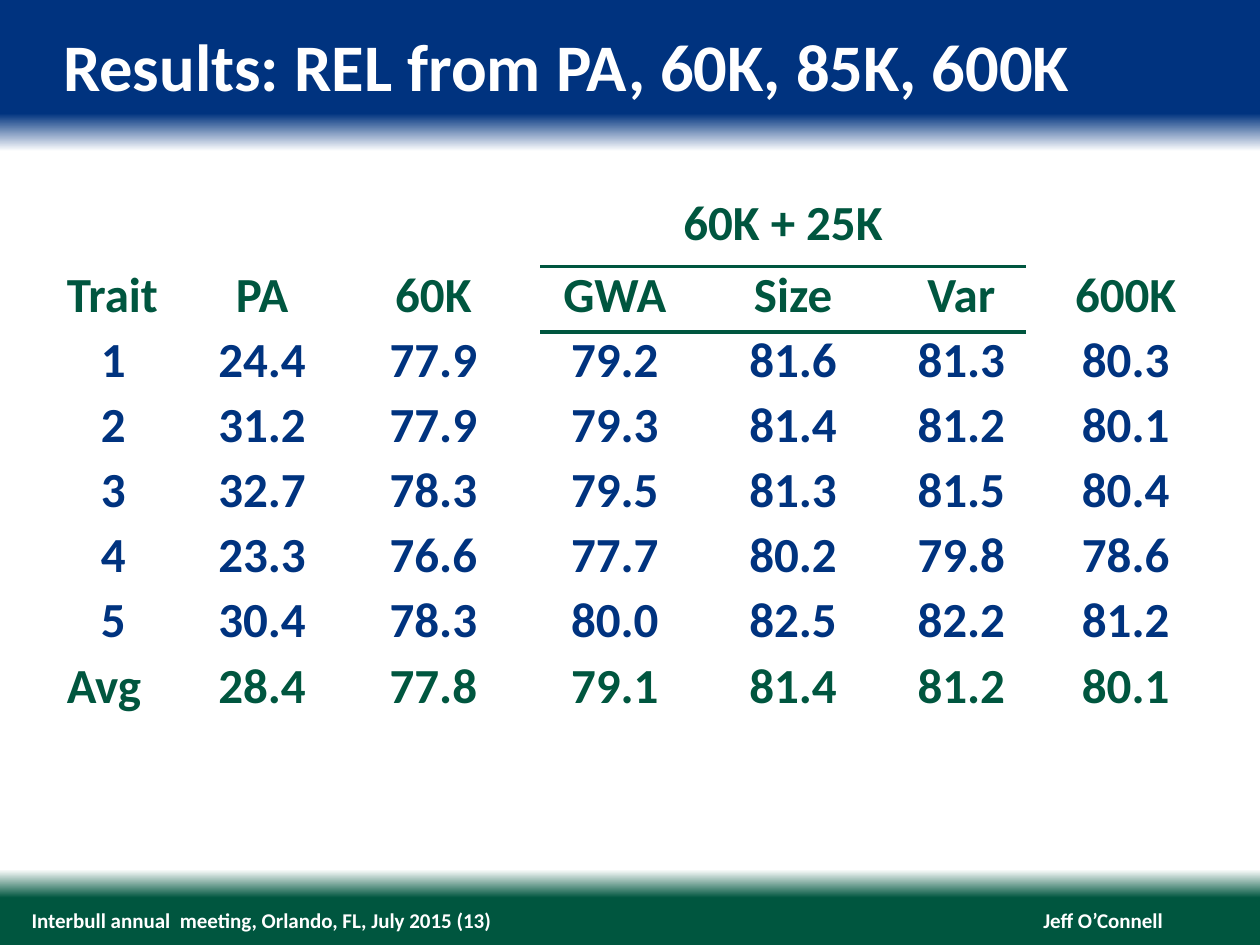
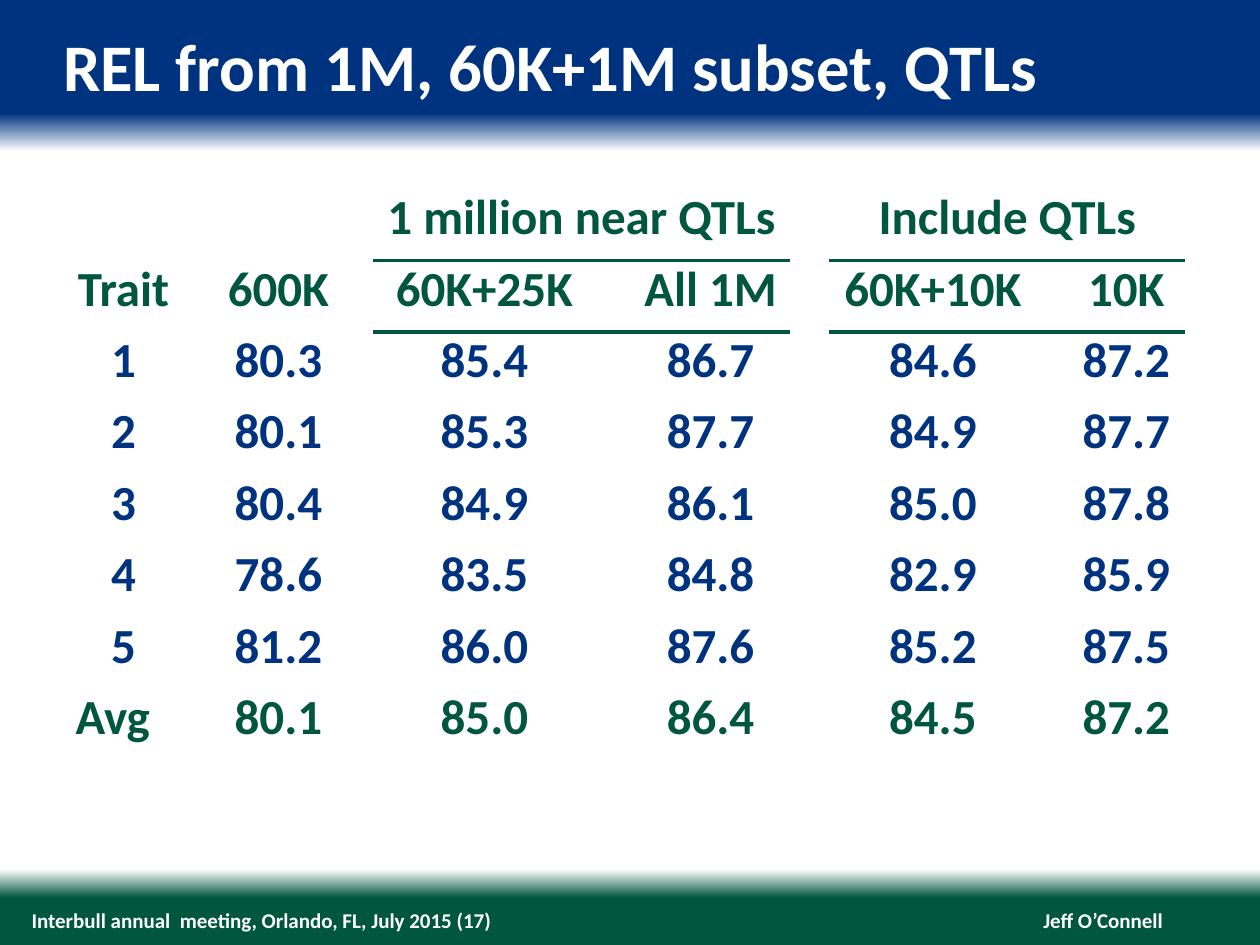
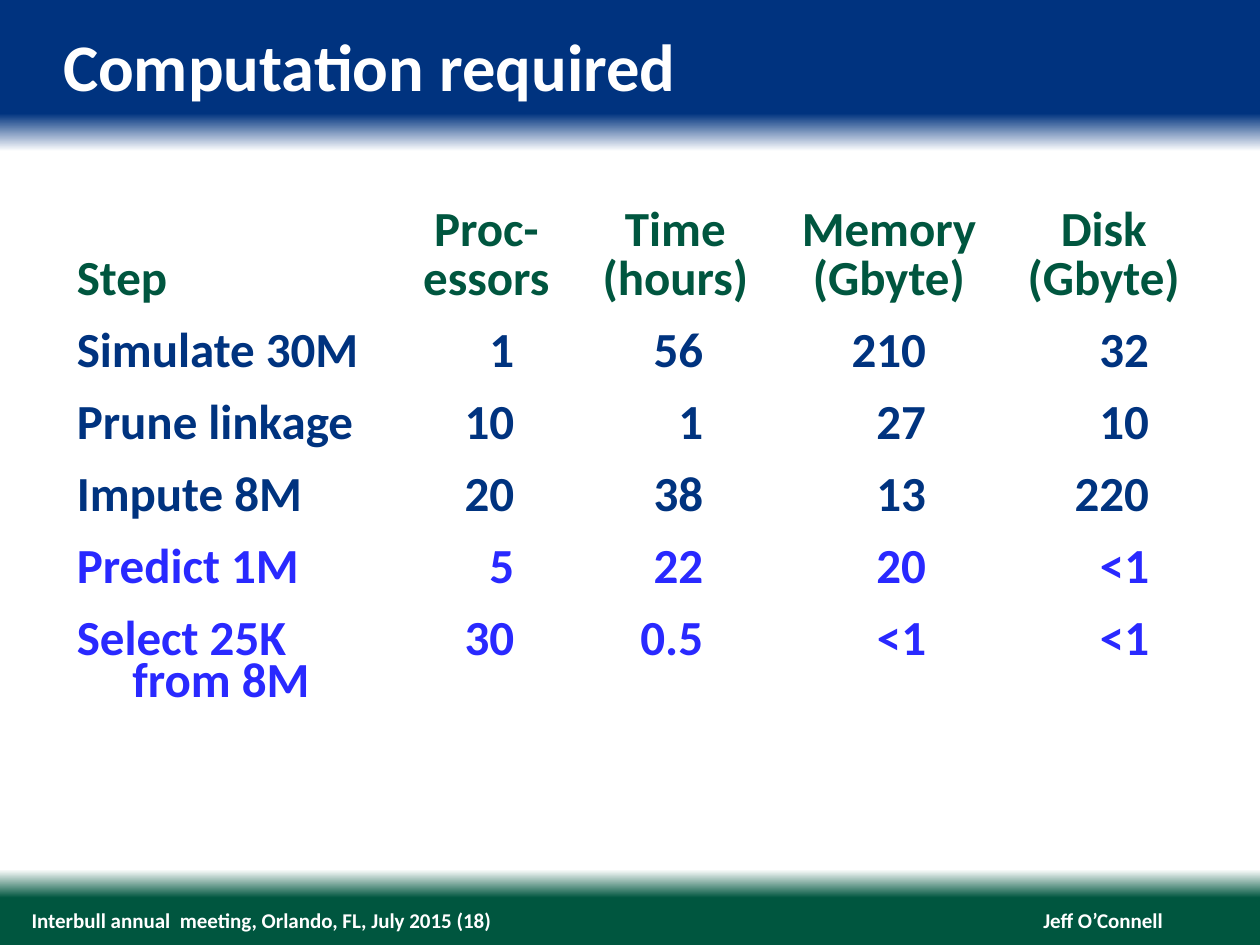
from dataclasses import dataclass

from lxml.etree import SubElement
from pptx import Presentation
from pptx.dml.color import RGBColor
from pptx.enum.text import MSO_ANCHOR as Anchor, MSO_AUTO_SIZE as AutoSize, PP_ALIGN as Align
from pptx.oxml.ns import qn
from pptx.util import Inches, Pt


@dataclass(frozen=True)
class Theme:
    navy: str = "00337F"
    green: str = "00563F"
    bright_blue: str = "2929FF"
    white: str = "FFFFFF"
    font: str = "Calibri"
    title_size: int = 38
    table_size: int = 28
    footer_size: int = 12
    rule_width: float = 2.25
    row_height: float = 0.41


THEME = Theme()
PLAIN_TABLE_STYLE = "{2D5ABB26-0587-4C30-8999-92F81FD0307C}"
BACKGROUND_STOPS = [(0, THEME.navy), (12, THEME.navy), (16, THEME.white),
                    (92, THEME.white), (95, THEME.green), (100, THEME.green)]


def add_color(parent, color):
    SubElement(parent, qn("a:srgbClr"), val=color)


def set_background(master):
    fill = master.background.fill
    fill.gradient()
    fill.gradient_angle = 270
    stop_list = master._element.xpath("./p:cSld/p:bg//a:gsLst")[0]
    for stop in list(stop_list):
        stop_list.remove(stop)
    for percent, color in BACKGROUND_STOPS:
        add_color(SubElement(stop_list, qn("a:gs"), pos=str(percent * 1000)), color)


def write_text(frame, text, size, color, align=Align.LEFT, spacing=None,
               next_spacing=None, next_indent=0):
    """Write one paragraph per line; next_* formats the lines after the first."""
    for index, line in enumerate(text.split("\n")):
        paragraph = frame.add_paragraph() if index else frame.paragraphs[0]
        paragraph.alignment = align
        line_spacing = next_spacing if index and next_spacing else spacing
        if line_spacing:
            paragraph.line_spacing = Pt(line_spacing)
        if index and next_indent:
            paragraph._p.get_or_add_pPr().set("marL", str(Inches(next_indent)))
        run = paragraph.add_run()
        run.text = line
        font = run.font
        font.name, font.size, font.bold = THEME.font, Pt(size), True
        font.color.rgb = RGBColor.from_string(color)


def clear_margins(frame):
    frame.margin_left = frame.margin_right = frame.margin_top = frame.margin_bottom = 0


def place(shape, left, top, width, height):
    shape.left, shape.top = Inches(left), Inches(top)
    shape.width, shape.height = Inches(width), Inches(height)


def add_footer(slide, text, left, width, align, wrap):
    box = slide.shapes.add_textbox(0, 0, 0, 0)
    frame = box.text_frame
    clear_margins(frame)
    frame.word_wrap = wrap
    frame.vertical_anchor = Anchor.MIDDLE
    write_text(frame, text, THEME.footer_size, THEME.white, align)
    place(box, left, 7.2, width, 0.2)


def add_titled_slide(presentation, title, number):
    slide = presentation.slides.add_slide(presentation.slide_layouts[5])
    place(slide.shapes.title, 0.5, 0.2, 9, 0.61)
    frame = slide.shapes.title.text_frame
    clear_margins(frame)
    frame.vertical_anchor = Anchor.TOP
    frame.auto_size = AutoSize.SHAPE_TO_FIT_TEXT
    write_text(frame, title, THEME.title_size, THEME.white)
    add_footer(slide, "Jeff O’Connell", 8.26, 0.97, Align.RIGHT, False)
    add_footer(slide, f"Interbull annual  meeting, Orlando, FL, July 2015 ({number})",
               0.25, 5.22, Align.LEFT, True)
    return slide


def add_plain_table(slide, left, top, widths, row_count, first_height=THEME.row_height):
    heights = [first_height] + [THEME.row_height] * (row_count - 1)
    table = slide.shapes.add_table(row_count, len(widths), Inches(left), Inches(top),
                                   Inches(sum(widths)), Inches(sum(heights))).table
    table._tbl.tblPr.find(qn("a:tableStyleId")).text = PLAIN_TABLE_STYLE
    table.first_row = table.horz_banding = False
    for column, width in zip(table.columns, widths):
        column.width = Inches(width)
    for row, height in zip(table.rows, heights):
        row.height = Inches(height)
    for cell in table.iter_cells():
        cell.fill.background()
    return table


def write_cell(cell, text, color, align=Align.CENTER, **text_format):
    write_text(cell.text_frame, text, THEME.table_size, color, align, **text_format)


def draw_border(cell, side):
    """Rule one side of a cell: lnT or lnB."""
    properties = cell._tc.get_or_add_tcPr()
    line = properties.makeelement(qn(f"a:{side}"), {"w": str(Pt(THEME.rule_width))})
    add_color(SubElement(line, qn("a:solidFill")), THEME.green)
    properties.insert(0, line)


def add_group_heading(table, text, first, last):
    """Span a heading over columns first to last, with a rule below it."""
    table.cell(0, first).merge(table.cell(0, last))
    write_cell(table.cell(0, first), text, THEME.green, spacing=30)
    for column in range(first, last + 1):
        draw_border(table.cell(0, column), "lnB")
        draw_border(table.cell(1, column), "lnT")


def size_empty_cells(table):
    """Give empty cells the table's type size, which sets their row height."""
    for cell in table.iter_cells():
        if not cell.text and not cell.is_spanned:
            end = cell.text_frame.paragraphs[0]._p.get_or_add_endParaRPr()
            end.set("sz", str(THEME.table_size * 100))


def add_reliability_table(slide, left, top, widths, rows, groups, first_height=THEME.row_height,
                          value_columns=None, left_labels=("Avg",), margins=None):
    """Fill a trait table; margins maps a column to its (left, right) insets."""
    table = add_plain_table(slide, left, top, widths, len(rows) + 1, first_height)
    for group in groups:
        add_group_heading(table, *group)
    for row_index, values in enumerate(rows, start=1):
        color = THEME.green if row_index in (1, len(rows)) else THEME.navy
        for column, value in zip(value_columns or range(len(widths)), values):
            cell = table.cell(row_index, column)
            align = Align.LEFT if value in left_labels else Align.CENTER
            write_cell(cell, value, color, align, spacing=30)
            if margins and column in margins:
                cell.margin_left, cell.margin_right = map(Inches, margins[column])
    size_empty_cells(table)
    return table


def add_computation_table(slide, headings, steps):
    table = add_plain_table(slide, 0.51, 1.62, [2.6, 1.5, 1.5, 1.89, 1.52],
                            len(steps) + 1, 0.81)
    right_margins = [0.1, 0.53, 0.53, 0.65, 0.4]
    for column, heading in enumerate(headings):
        cell = table.cell(0, column)
        cell.vertical_anchor = Anchor.BOTTOM
        write_cell(cell, heading, THEME.green, Align.CENTER if column else Align.LEFT, spacing=28)
    for row_index, (color, *values) in enumerate(steps, start=1):
        for column, value in enumerate(values):
            cell = table.cell(row_index, column)
            cell.margin_right = Inches(right_margins[column])
            write_cell(cell, value, color, Align.RIGHT if column else Align.LEFT,
                       spacing=34, next_spacing=24, next_indent=0.44)


def main():
    presentation = Presentation()
    presentation.slide_width, presentation.slide_height = Inches(10), Inches(7.5)
    set_background(presentation.slide_master)

    slide = add_titled_slide(presentation, "Results: REL from PA, 60K, 85K, 600K", 13)
    add_reliability_table(
        slide, 0.43, 1.55, [0.94, 1.42, 1.5, 1.18, 1.65, 1.02, 1.34],
        [("Trait", "PA", "60K", "GWA", "Size", "Var", "600K"),
         ("1", "24.4", "77.9", "79.2", "81.6", "81.3", "80.3"),
         ("2", "31.2", "77.9", "79.3", "81.4", "81.2", "80.1"),
         ("3", "32.7", "78.3", "79.5", "81.3", "81.5", "80.4"),
         ("4", "23.3", "76.6", "77.7", "80.2", "79.8", "78.6"),
         ("5", "30.4", "78.3", "80.0", "82.5", "82.2", "81.2"),
         ("Avg", "28.4", "77.8", "79.1", "81.4", "81.2", "80.1")],
        [("60K + 25K", 3, 5)], first_height=0.45, left_labels=("Trait", "Avg"),
        margins={2: (0.1, 0.3), 6: (0.35, 0.1)})

    slide = add_titled_slide(presentation, "REL from 1M, 60K+1M subset, QTLs", 17)
    table = add_reliability_table(
        slide, 0.5, 1.5, [0.96, 1.5, 1.77, 0.28, 1.26, 0.31, 1.65, 0.24, 0.94],
        [("Trait", "600K", "60K+25K", "All 1M", "60K+10K", "10K"),
         ("1", "80.3", "85.4", "86.7", "84.6", "87.2"),
         ("2", "80.1", "85.3", "87.7", "84.9", "87.7"),
         ("3", "80.4", "84.9", "86.1", "85.0", "87.8"),
         ("4", "78.6", "83.5", "84.8", "82.9", "85.9"),
         ("5", "81.2", "86.0", "87.6", "85.2", "87.5"),
         ("Avg", "80.1", "85.0", "86.4", "84.5", "87.2")],
        [("1 million near QTLs", 2, 4), ("Include QTLs", 6, 8)],
        value_columns=(0, 1, 2, 4, 6, 8))
    table.cell(0, 5).merge(table.cell(1, 5))

    slide = add_titled_slide(presentation, "Computation required", 18)
    add_computation_table(
        slide, ["Step", "Proc-essors", "Time\n(hours)", "Memory\n(Gbyte)", "Disk\n(Gbyte)"],
        [(THEME.navy, "Simulate 30M", "1", "56", "210", "32"),
         (THEME.navy, "Prune linkage", "10", "1", "27", "10"),
         (THEME.navy, "Impute 8M", "20", "38", "13", "220"),
         (THEME.bright_blue, "Predict 1M", "5", "22", "20", "<1"),
         (THEME.bright_blue, "Select 25K\nfrom 8M", "30", "0.5", "<1", "<1")])

    presentation.save("out.pptx")


if __name__ == "__main__":
    main()
